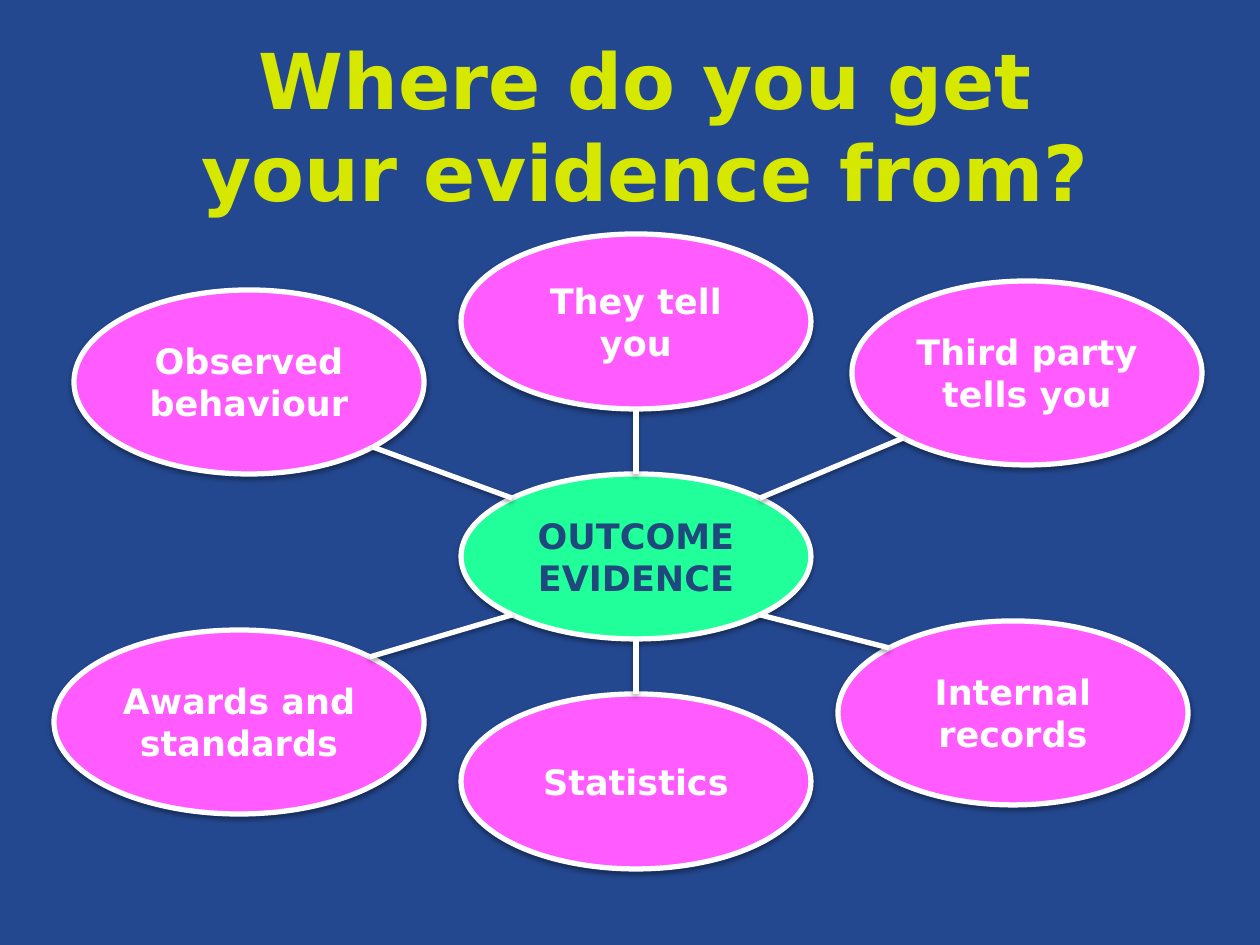
from dataclasses import dataclass
from math import sqrt

from lxml import etree
from pptx import Presentation
from pptx.dml.color import RGBColor
from pptx.enum.shapes import MSO_CONNECTOR, MSO_SHAPE
from pptx.enum.text import MSO_ANCHOR, PP_ALIGN
from pptx.oxml.ns import qn
from pptx.util import Emu, Pt

PX = 914400 // 126
FONT = "DejaVu Sans"
WHITE, PINK, GREEN = "FFFFFF", "FF5BFF", "21FF9B"
NAVY, BLUE, LIME = "1F497D", "244890", "D7E800"
OVAL, STRAIGHT = MSO_SHAPE.OVAL, MSO_CONNECTOR.STRAIGHT
CENTER, TOP, MIDDLE = PP_ALIGN.CENTER, MSO_ANCHOR.TOP, MSO_ANCHOR.MIDDLE


@dataclass(frozen=True)
class Bubble:
    text: str
    x: int
    y: int
    w: int
    h: int
    side: tuple[int, int]  # direction from the hub: (right, down)
    fill: str = PINK
    color: str = WHITE


HUB = Bubble("OUTCOME EVIDENCE", 461, 474, 350, 165, (0, 0), GREEN, NAVY)
SOURCES = [
    Bubble("Internal records", 838, 621, 350, 184, (1, 1)),
    Bubble("Third party tells you", 852, 281, 350, 184, (1, -1)),
    Bubble("Awards and standards", 54, 630, 370, 184, (-1, 1)),
    Bubble("Observed behaviour", 74, 290, 350, 184, (-1, -1)),
    Bubble("Statistics", 461, 694, 350, 175, (0, 1)),
    Bubble("They tell you", 461, 234, 350, 175, (0, -1)),
]


def px(n: float) -> Emu:
    return Emu(round(n * PX))


def rgb(color: str) -> RGBColor:
    return RGBColor.from_string(color)


def add_shadow(shape) -> None:
    """Give a shape or connector a soft black shadow straight below it."""
    effects = etree.SubElement(shape._element.spPr, qn("a:effectLst"))
    shadow = etree.SubElement(effects, qn("a:outerShdw"), blurRad=str(Pt(3.1)),
                              dist=str(Pt(1.6)), dir="5400000", rotWithShape="0")
    black = etree.SubElement(shadow, qn("a:srgbClr"), val="000000")
    etree.SubElement(black, qn("a:alpha"), val="38000")


def set_outline(shape) -> None:
    shape.line.color.rgb = rgb(WHITE)
    shape.line.width = Pt(3)


def write(tf, text: str, size: int, color: str, anchor: MSO_ANCHOR) -> None:
    tf.word_wrap = True
    tf.vertical_anchor = anchor
    p = tf.paragraphs[0]
    p.text = text
    p.alignment = CENTER
    p.font.name, p.font.size, p.font.bold = FONT, Pt(size), True
    p.font.color.rgb = rgb(color)


def draw_bubble(s, b: Bubble) -> None:
    sp = s.shapes.add_shape(OVAL, px(b.x), px(b.y), px(b.w), px(b.h))
    sp.fill.solid()
    sp.fill.fore_color.rgb = rgb(b.fill)
    set_outline(sp)
    add_shadow(sp)
    sp.text_frame.margin_left = sp.text_frame.margin_right = px(10)
    write(sp.text_frame, b.text, 20, b.color, MIDDLE)


def edge_point(b: Bubble, dx: int, dy: int) -> tuple[Emu, Emu]:
    """Point on the ellipse in direction (dx, dy), each -1, 0 or 1."""
    reach = 2 * sqrt(dx * dx + dy * dy)
    return (px(b.x + b.w / 2 + dx * b.w / reach),
            px(b.y + b.h / 2 + dy * b.h / reach))


def draw_spoke(s, b: Bubble) -> None:
    dx, dy = b.side
    line = s.shapes.add_connector(STRAIGHT, *edge_point(HUB, dx, dy),
                                  *edge_point(b, -dx, -dy))
    set_outline(line)
    add_shadow(line)


def main() -> None:
    prs = Presentation()
    prs.slide_width, prs.slide_height = px(1260), px(945)
    s = prs.slides.add_slide(prs.slide_layouts[5])
    s.background.fill.solid()
    s.background.fill.fore_color.rgb = rgb(BLUE)

    title = s.shapes.title
    title.left, title.top, title.width, title.height = map(px, (154, 26, 983, 118))
    write(title.text_frame, "Where do you get your evidence from?", 44, LIME, TOP)

    for b in [*SOURCES, HUB]:
        draw_bubble(s, b)
    for b in SOURCES:
        draw_spoke(s, b)
    prs.save("out.pptx")


if __name__ == "__main__":
    main()
